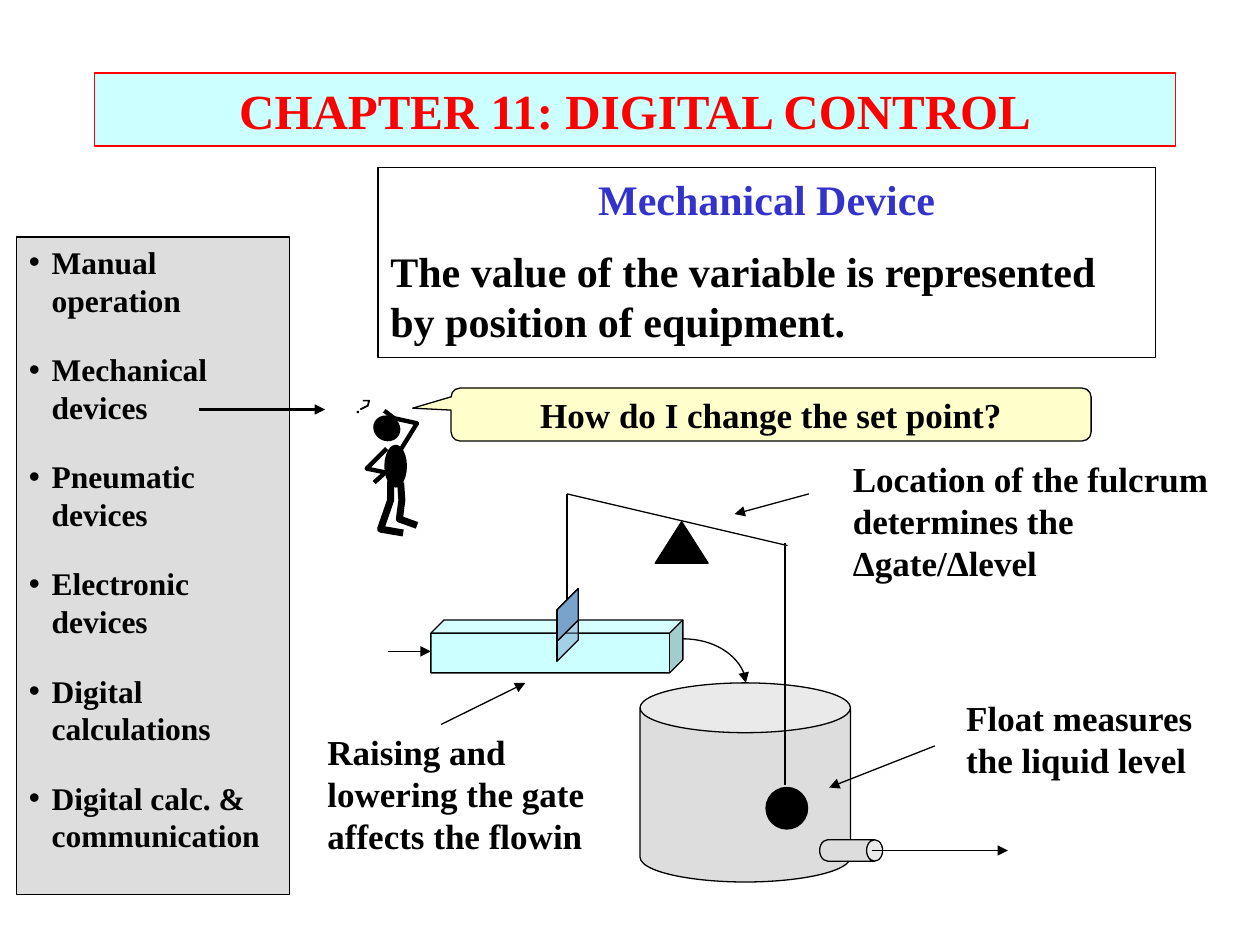
from lxml import etree
from pptx import Presentation
from pptx.dml.color import RGBColor
from pptx.enum.shapes import MSO_CONNECTOR, MSO_SHAPE
from pptx.enum.text import MSO_ANCHOR, MSO_AUTO_SIZE, PP_ALIGN
from pptx.oxml.ns import qn
from pptx.util import Inches, Pt

LEFT, CENTER = PP_ALIGN.LEFT, PP_ALIGN.CENTER
TOP, MIDDLE = MSO_ANCHOR.TOP, MSO_ANCHOR.MIDDLE
STRAIGHT, CURVE = MSO_CONNECTOR.STRAIGHT, MSO_CONNECTOR.CURVE
RECT, OVAL, TRIANGLE = MSO_SHAPE.RECTANGLE, MSO_SHAPE.OVAL, MSO_SHAPE.ISOSCELES_TRIANGLE
CUBE, CAN, CALLOUT = MSO_SHAPE.CUBE, MSO_SHAPE.CAN, MSO_SHAPE.ROUNDED_RECTANGULAR_CALLOUT

FONT = "Times New Roman"
COLORS = {
    "black": "000000", "red": "FF0000", "blue": "3333CC", "water": "CCFFFF",
    "gate": "99CCFF", "gray": "DDDDDD", "speech": "FFFFCC",
}
DEVICES = ["Manual operation", "Mechanical devices", "Pneumatic devices",
           "Electronic devices", "Digital calculations", "Digital calc. & communication"]

# Strokes of the thinking figure: line width, then points in hundredths of an inch
STROKES = [
    (2.5, [(307, 356), (291, 372), (306, 375), (297, 383)]),  # arm on hip
    (2.5, [(318, 357), (331, 336), (313, 332), (305, 326)]),  # raised arm
    (4, [(310, 382), (310, 397), (302, 420), (320, 423)]),  # left leg
    (4, [(318, 383), (319, 397), (317, 412), (331, 417)]),  # right leg
    (1, [(288, 318), (293, 318), (292, 322), (286, 325)]),  # question mark
]


def rgb(name):
    return RGBColor.from_string(COLORS[name])


def place(sp, box):
    sp.left, sp.top, sp.width, sp.height = (Inches(v) for v in box)


def paint(sp, fill=None, line="black", alpha=None, width=0.75):
    if fill:
        sp.fill.solid()
        sp.fill.fore_color.rgb = rgb(fill)
    else:
        sp.fill.background()
    if alpha:
        clr = sp._element.spPr.find(".//" + qn("a:srgbClr"))
        etree.SubElement(clr, qn("a:alpha"), val=str(alpha * 1000))
    if line:
        sp.line.color.rgb = rgb(line)
        sp.line.width = Pt(width)
    else:
        sp.line.fill.background()


def add_figure_shape(s, kind, box, fill=None, line="black", adj=(), alpha=None):
    sp = s.shapes.add_shape(kind, *(Inches(v) for v in box))
    sp.shadow.inherit = False
    for i, value in enumerate(adj):
        sp.adjustments[i] = value
    paint(sp, fill, line, alpha)
    return sp


def set_text(sp, lines, size, anchor=TOP, before=0, wrap=True):
    """Write lines of (text, colour, alignment), one paragraph each."""
    tf = sp.text_frame
    tf.word_wrap = wrap
    tf.auto_size = MSO_AUTO_SIZE.NONE
    tf.vertical_anchor = anchor
    for i, (text, color, align) in enumerate(lines):
        p = tf.paragraphs[0] if i == 0 else tf.add_paragraph()
        p.alignment = align
        p.space_before = Pt(before)
        r = p.add_run()
        r.text = text
        r.font.name, r.font.size, r.font.bold = FONT, Pt(size), True
        r.font.color.rgb = rgb(color)


def add_bullets(tf):
    for p in tf.paragraphs:
        pPr = p._p.get_or_add_pPr()
        pPr.set("marL", str(Inches(0.18)))
        pPr.set("indent", str(-Inches(0.18)))
        etree.SubElement(pPr, qn("a:buChar"), char="•")


def add_label(s, text, box):
    sp = s.shapes.add_textbox(*(Inches(v) for v in box))
    set_text(sp, [(text, "black", LEFT)], 20)


def add_line(s, start, end, arrow=True, width=0.75, kind=STRAIGHT):
    cx = s.shapes.add_connector(kind, *(Inches(v) for v in (*start, *end)))
    cx.line.color.rgb = rgb("black")
    cx.line.width = Pt(width)
    spPr = cx._element.spPr
    if arrow:
        etree.SubElement(spPr.find(qn("a:ln")), qn("a:tailEnd"), type="triangle")
    if kind == CURVE:
        spPr.find(qn("a:prstGeom")).set("prst", "curvedConnector2")
    etree.SubElement(spPr, qn("a:effectLst"))


def add_thinker(s):
    for width, points in STROKES:
        fb = s.shapes.build_freeform(*points[0], scale=Inches(0.01))
        fb.add_line_segments(points[1:], close=False)
        sp = fb.convert_to_shape()
        sp.shadow.inherit = False
        paint(sp, width=width)
    head = add_figure_shape(s, OVAL, (2.96, 3.3, 0.22, 0.2), "black", None)
    head.rotation = 30
    add_figure_shape(s, OVAL, (3.05, 3.53, 0.18, 0.34), "black", None)
    add_figure_shape(s, OVAL, (2.83, 3.26, 0.02, 0.02), "black", None)


def add_question(s):
    sp = add_figure_shape(s, CALLOUT, (3.58, 3.08, 5.08, 0.42), "speech",
                          adj=(-0.56, -0.12, 0.17))
    set_text(sp, [("How do I change the set point?", "black", CENTER)], 20, MIDDLE, wrap=False)


def add_headings(s):
    title, body = s.shapes.title, s.placeholders[1]
    place(title, (0.75, 0.58, 8.58, 0.58))
    paint(title, "water", "red")
    set_text(title, [("CHAPTER 11: DIGITAL CONTROL", "red", CENTER)], 28, MIDDLE)
    place(body, (0.13, 1.88, 2.17, 5.22))
    paint(body, "gray")
    set_text(body, [(d, "black", LEFT) for d in DEVICES], 18, before=18)
    add_bullets(body.text_frame)
    add_line(s, (1.58, 3.25), (2.58, 3.25), width=1.5)
    sp = add_figure_shape(s, RECT, (3, 1.33, 6.17, 1.51))
    set_text(sp, [("Mechanical Device", "blue", CENTER),
                  ("The value of the variable is represented by position of equipment.",
                   "black", LEFT)], 24, before=12)


def add_level_control(s):
    add_figure_shape(s, CUBE, (3.42, 4.92, 2, 0.42), "water", adj=[0.25])
    add_figure_shape(s, CUBE, (4.42, 4.92, 0.17, 0.33), "gate", adj=[1], alpha=50)
    add_figure_shape(s, CUBE, (4.42, 4.67, 0.17, 0.42), "gate", adj=[1])
    add_line(s, (3.08, 5.17), (3.42, 5.17))
    add_line(s, (4.5, 4.75), (4.5, 3.92), arrow=False)
    add_figure_shape(s, CAN, (5.08, 5.42, 1.67, 1.58), "gray", adj=[0.25])
    add_line(s, (5.42, 5.07), (5.92, 5.42), kind=CURVE)
    outlet = add_figure_shape(s, CAN, (6.67, 6.5, 0.17, 0.5), "gray", adj=[0.75])
    outlet.rotation = 90
    add_line(s, (6.92, 6.75), (8, 6.75))
    add_figure_shape(s, OVAL, (6.08, 6.25, 0.33, 0.33), "black")
    add_line(s, (6.23, 6.23), (6.23, 4.31), arrow=False)
    add_line(s, (6.25, 4.33), (4.5, 3.92), arrow=False)
    add_figure_shape(s, TRIANGLE, (5.2, 4.14, 0.42, 0.33), "black")


def add_part_labels(s):
    add_label(s, "Float measures the liquid level", (7.57, 5.48, 2.25, 0.77))
    add_label(s, "Raising and lowering the gate affects the flowin", (2.5, 5.75, 2.25, 1.1))
    add_label(s, "Location of the fulcrum determines the Δgate/Δlevel", (6.67, 3.58, 3.08, 1.1))
    add_line(s, (7.42, 5.92), (6.58, 6.25))
    add_line(s, (3.5, 5.75), (4.17, 5.42))
    add_line(s, (6.42, 3.92), (5.83, 4.08))


def main():
    prs = Presentation()
    prs.slide_width, prs.slide_height = Inches(10), Inches(7.5)
    s = prs.slides.add_slide(prs.slide_layouts[1])
    add_headings(s)
    add_level_control(s)
    add_part_labels(s)
    add_thinker(s)
    add_question(s)
    prs.save("out.pptx")


if __name__ == "__main__":
    main()
